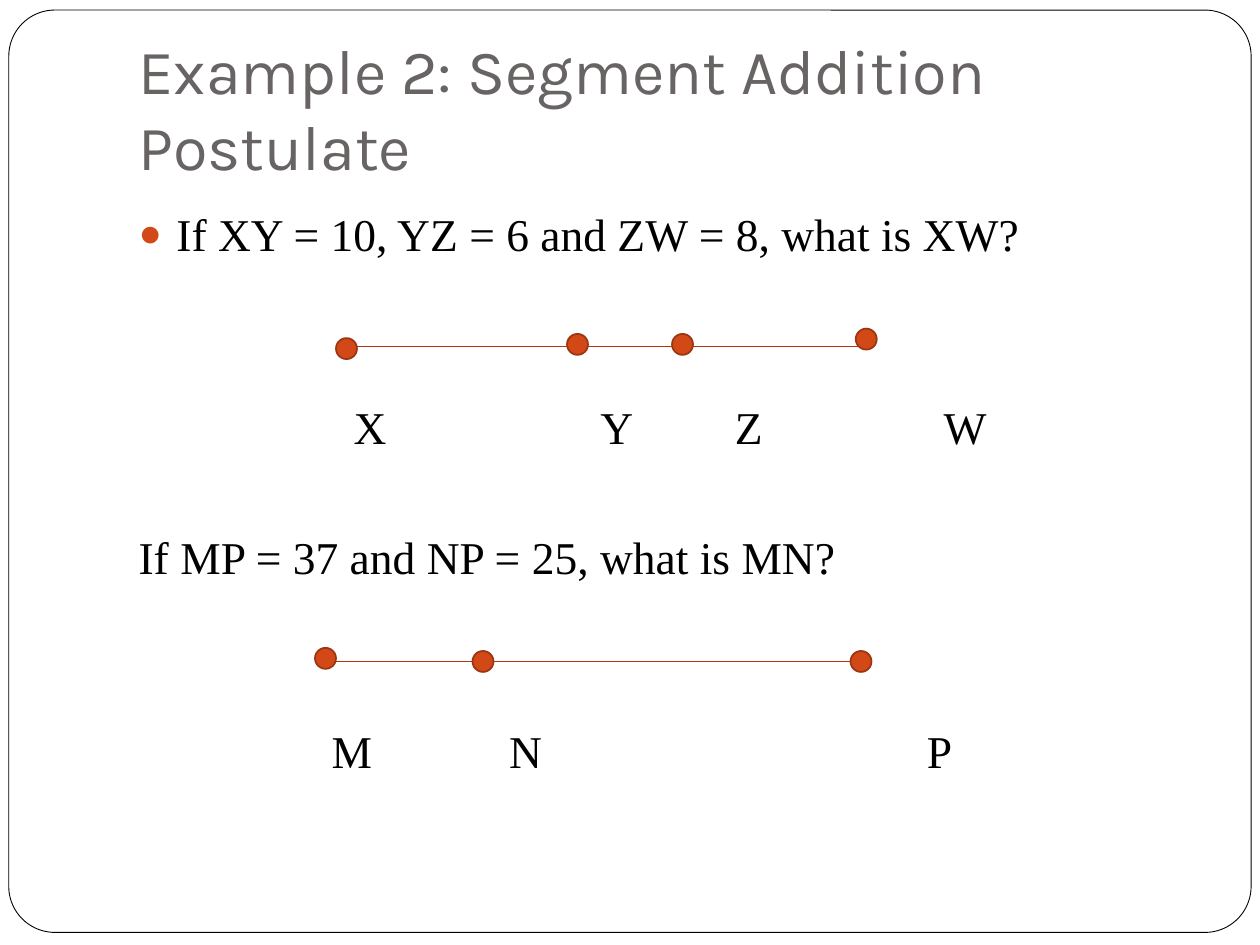
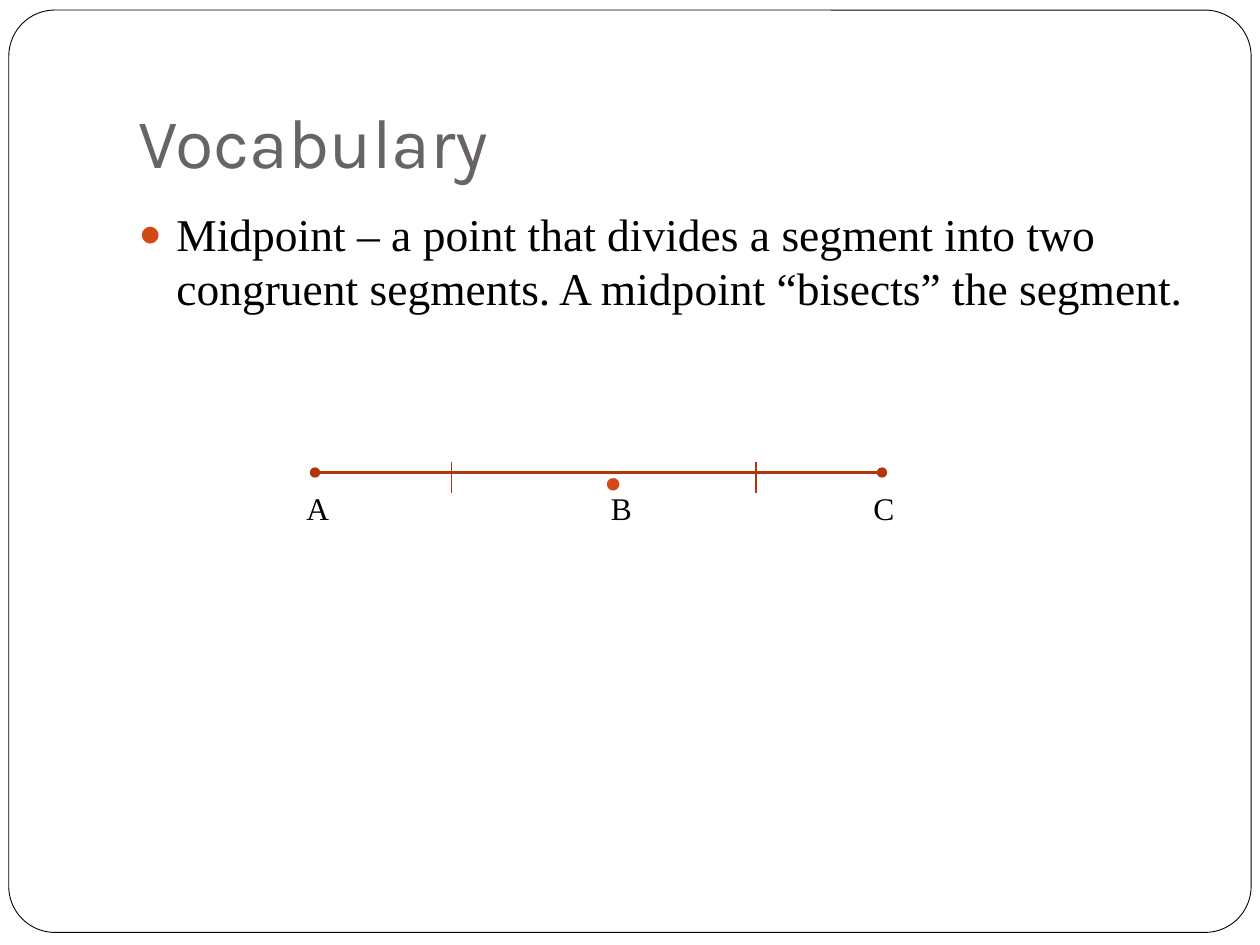
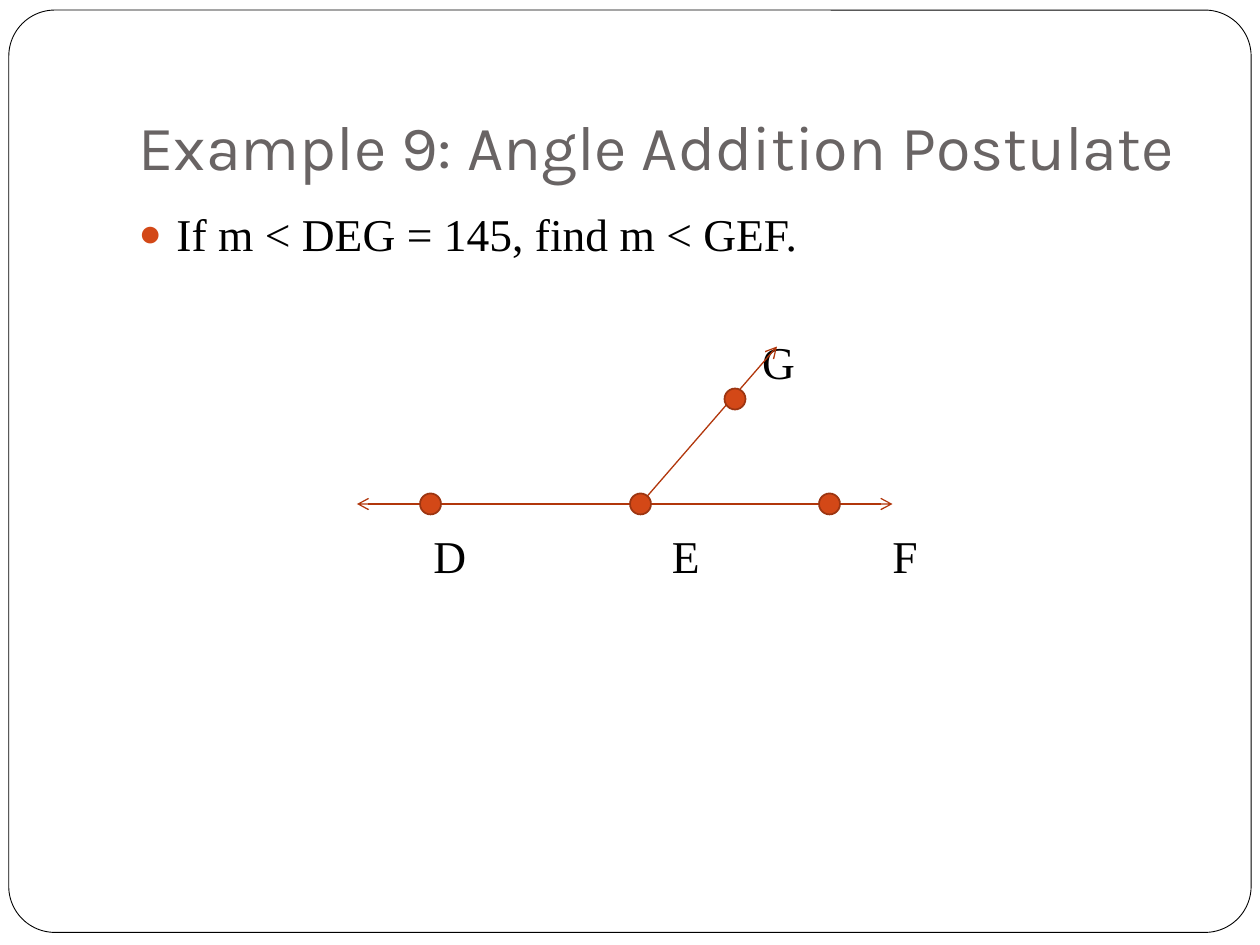
from dataclasses import dataclass

from lxml import etree
from pptx import Presentation
from pptx.dml.color import RGBColor
from pptx.enum.shapes import MSO_CONNECTOR, MSO_SHAPE
from pptx.enum.text import MSO_ANCHOR, MSO_AUTO_SIZE, PP_ALIGN
from pptx.oxml.ns import qn
from pptx.util import Inches, Pt

STRAIGHT = MSO_CONNECTOR.STRAIGHT
ELLIPSE = MSO_SHAPE.OVAL
ROUNDED = MSO_SHAPE.ROUNDED_RECTANGLE
LEFT = PP_ALIGN.LEFT
TOP, BOTTOM = MSO_ANCHOR.TOP, MSO_ANCHOR.BOTTOM
NO_AUTOFIT = MSO_AUTO_SIZE.NONE

WIDTH, HEIGHT = Inches(10), Inches(7.5)
COLUMNS, ROWS = 120, 90
TITLE_FONT, BODY_FONT = "Karla", "Times New Roman"
BLACK, WHITE, GREY = "000000", "FFFFFF", "696464"
ORANGE, RUST, DOT_EDGE = "D34817", "B1360B", "9C3511"
BODY_SIZE, SMALL_SIZE = 26, 18
SPACE_BEFORE, LINE_PITCH = 5.8, 36.9
DOT_SIZE = 2
FRAME_BOX = (0.84, 0.96, 118.32, 87.84)
TITLE_BOX = (12, 3.6, 102, 15)
BODY_BOX = (12, 19, 102, 60)


@dataclass(frozen=True)
class BodyLine:
    text: str
    skipped_lines: int = 0
    bullet: bool = False


@dataclass(frozen=True)
class Segment:
    start: tuple[float, float]
    end: tuple[float, float]
    head: str = ""
    tail: str = ""
    width: float = 0.75


@dataclass(frozen=True)
class Label:
    text: str
    box: tuple[float, float, float, float]
    size: float = BODY_SIZE
    color: str = BLACK


@dataclass(frozen=True)
class Lesson:
    title: str
    title_size: float
    lines: tuple[BodyLine, ...]
    segments: tuple[Segment, ...]
    labels: tuple[Label, ...]
    dots: tuple[tuple[float, float], ...] = ()


def label_row(row: float, columns: dict[str, float], width: float = 7,
              height: float = 6, size: float = BODY_SIZE) -> tuple[Label, ...]:
    return tuple(Label(name, (column, row, width, height), size)
                 for name, column in columns.items())


LESSONS = (
    Lesson(
        "Example 2: Segment Addition Postulate", 36,
        (
            BodyLine("If XY = 10, YZ = 6 and ZW = 8, what is XW?", bullet=True),
            BodyLine("If MP = 37 and NP = 25, what is MN?", 4),
        ),
        (Segment((33, 33), (83, 33)), Segment((32, 63), (82.5, 63))),
        label_row(37.4, {"X": 32.5, "Y": 56, "Z": 68.8, "W": 88.7})
        + label_row(68.3, {"M": 30.4, "N": 47.3, "P": 87.1}),
        dots=((33, 33.2), (55, 32.8), (82.5, 32.3), (65, 32.8),
              (46, 63), (31, 62.7), (82, 63)),
    ),
    Lesson(
        "Vocabulary", 40,
        (BodyLine("Midpoint – a point that divides a segment into two congruent "
                  "segments. A midpoint “bisects” the segment.", bullet=True),),
        (
            Segment((30, 45), (84, 45), "oval", "oval", 1.5),
            Segment((43, 44), (43, 47)),
            Segment((72, 44), (72, 47)),
        ),
        label_row(46, {"A": 28, "B": 57, "C": 82}, 4, 4.8, SMALL_SIZE)
        + (Label(".", (56, 36, 5, 13.3), 60, ORANGE),),
    ),
    Lesson(
        "Example 9: Angle Addition Postulate", 36,
        (BodyLine("If m < DEG = 145, find m < GEF.", bullet=True),),
        (
            Segment((34, 48), (85, 48), "arrow", "arrow"),
            Segment((61, 48), (74, 33), tail="arrow"),
        ),
        label_row(31.2, {"G": 71.4})
        + label_row(49.7, {"D": 40.1, "E": 62.8, "F": 83.8}),
        dots=((61, 48), (41, 48), (79, 48), (70, 38)),
    ),
)


def color_of(value: str) -> RGBColor:
    return RGBColor.from_string(value)


def across(column: float) -> int:
    return round(WIDTH * column / COLUMNS)


def down(row: float) -> int:
    return round(HEIGHT * row / ROWS)


def place(box: tuple[float, float, float, float]) -> tuple[int, int, int, int]:
    left, top, width, height = box
    return across(left), down(top), across(width), down(height)


def move(shape, box: tuple[float, float, float, float]) -> None:
    shape.left, shape.top, shape.width, shape.height = place(box)


def add_run(paragraph, text: str, font: str, size: float, color: str) -> None:
    run = paragraph.add_run()
    run.text = text
    run.font.name = font
    run.font.size = Pt(size)
    run.font.color.rgb = color_of(color)


def add_child(parent, tag: str, **attributes: str):
    return etree.SubElement(parent, qn(tag), attributes)


def add_outlined(slide, kind, box, fill: str, line: str, width: float):
    shape = slide.shapes.add_shape(kind, *place(box))
    shape.shadow.inherit = False
    shape.fill.solid()
    shape.fill.fore_color.rgb = color_of(fill)
    shape.line.color.rgb = color_of(line)
    shape.line.width = Pt(width)
    return shape


def add_frame_to_master(presentation, slide) -> None:
    frame = add_outlined(slide, ROUNDED, FRAME_BOX, WHITE, BLACK, 0.5)
    frame.adjustments[0] = 0.05
    presentation.slide_master.shapes.element.insert(2, frame.element)


def add_title(slide, lesson: Lesson) -> None:
    title = slide.shapes.title
    move(title, TITLE_BOX)
    frame = title.text_frame
    frame.auto_size = NO_AUTOFIT
    frame.vertical_anchor = BOTTOM
    frame.margin_bottom = Inches(0.1)
    paragraph = frame.paragraphs[0]
    paragraph.alignment = LEFT
    add_run(paragraph, lesson.title, TITLE_FONT, lesson.title_size, GREY)


def format_body_line(paragraph, line: BodyLine) -> None:
    paragraph.alignment = LEFT
    paragraph.space_before = Pt(SPACE_BEFORE + line.skipped_lines * LINE_PITCH)
    properties = paragraph._p.get_or_add_pPr()
    indent = Inches(0.3) if line.bullet else 0
    properties.set("marL", str(indent))
    properties.set("indent", str(-indent))
    if line.bullet:
        add_child(add_child(properties, "a:buClr"), "a:srgbClr", val=ORANGE)
        add_child(properties, "a:buSzPct", val="85000")
        add_child(properties, "a:buChar", char="●")
    else:
        add_child(properties, "a:buNone")


def add_body(slide, lines: tuple[BodyLine, ...]) -> None:
    body = slide.placeholders[1]
    move(body, BODY_BOX)
    frame = body.text_frame
    frame.auto_size = NO_AUTOFIT
    frame.vertical_anchor = TOP
    for index, line in enumerate(lines):
        paragraph = frame.add_paragraph() if index else frame.paragraphs[0]
        format_body_line(paragraph, line)
        add_run(paragraph, line.text, BODY_FONT, BODY_SIZE, BLACK)


def add_segment(slide, segment: Segment) -> None:
    (start_column, start_row), (end_column, end_row) = segment.start, segment.end
    connector = slide.shapes.add_connector(
        STRAIGHT, across(start_column), down(start_row),
        across(end_column), down(end_row))
    connector.line.color.rgb = color_of(RUST)
    connector.line.width = Pt(segment.width)
    properties = connector.element.spPr
    outline = properties.find(qn("a:ln"))
    for tag, kind in (("a:headEnd", segment.head), ("a:tailEnd", segment.tail)):
        if kind:
            add_child(outline, tag, type=kind)
    add_child(properties, "a:effectLst")


def add_dot(slide, center: tuple[float, float]) -> None:
    column, row = center
    box = (column - DOT_SIZE / 2, row - DOT_SIZE / 2, DOT_SIZE, DOT_SIZE)
    add_outlined(slide, ELLIPSE, box, ORANGE, DOT_EDGE, 1)


def add_label(slide, label: Label) -> None:
    frame = slide.shapes.add_textbox(*place(label.box)).text_frame
    frame.word_wrap = True
    add_run(frame.paragraphs[0], label.text, BODY_FONT, label.size, label.color)


def add_lesson(slide, lesson: Lesson) -> None:
    add_title(slide, lesson)
    add_body(slide, lesson.lines)
    for label in lesson.labels:
        add_label(slide, label)
    for segment in lesson.segments:
        add_segment(slide, segment)
    for center in lesson.dots:
        add_dot(slide, center)


def main() -> None:
    presentation = Presentation()
    presentation.slide_width, presentation.slide_height = WIDTH, HEIGHT
    layout = presentation.slide_layouts[1]
    slides = [presentation.slides.add_slide(layout) for _ in LESSONS]
    add_frame_to_master(presentation, slides[0])
    for slide, lesson in zip(slides, LESSONS):
        add_lesson(slide, lesson)
    presentation.save("out.pptx")


if __name__ == "__main__":
    main()
